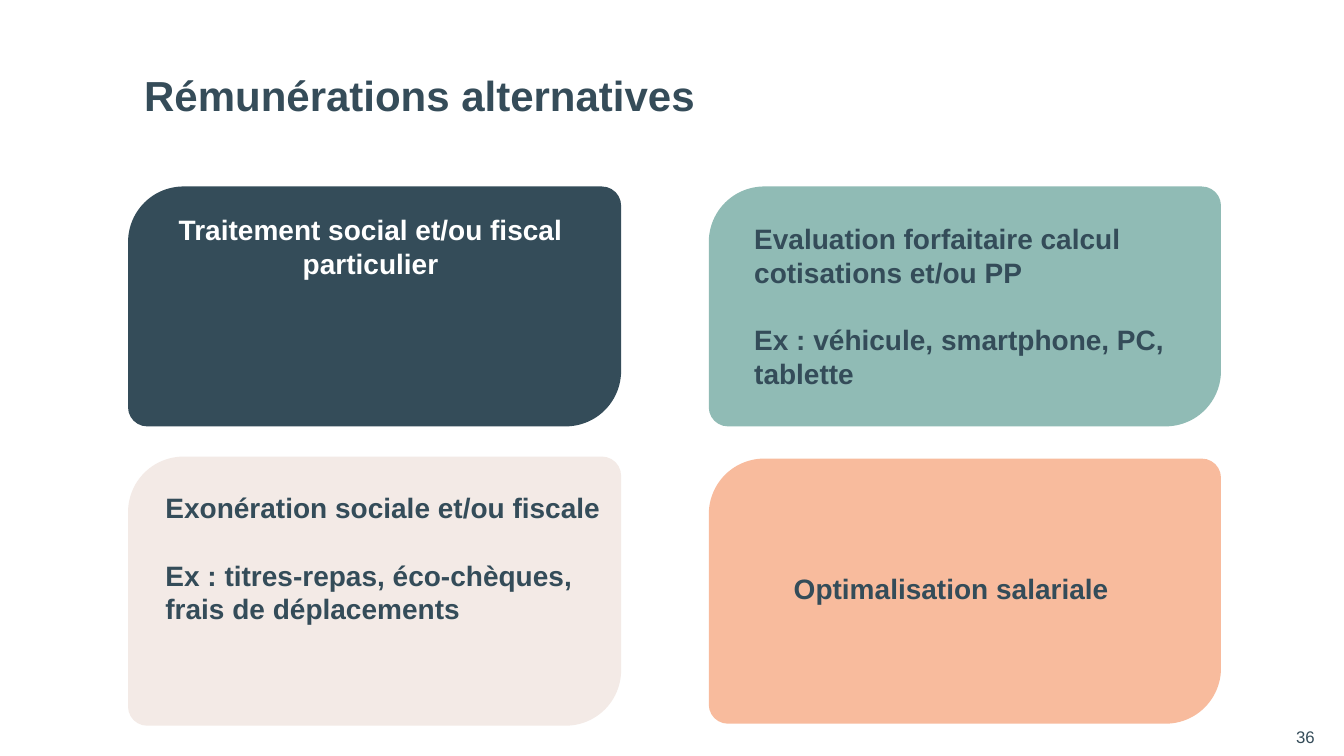
from pptx import Presentation
from pptx.dml.color import RGBColor
from pptx.enum.shapes import MSO_SHAPE
from pptx.enum.text import MSO_ANCHOR, PP_ALIGN
from pptx.util import Inches, Pt

CARD_SHAPE = MSO_SHAPE.ROUND_2_DIAG_RECTANGLE
TOP, MIDDLE = MSO_ANCHOR.TOP, MSO_ANCHOR.MIDDLE
LEFT, CENTER, RIGHT = PP_ALIGN.LEFT, PP_ALIGN.CENTER, PP_ALIGN.RIGHT

COLORS = {
    "navy": "344C59",
    "title": "354C59",
    "white": "FFFFFF",
    "green": "90BBB5",
    "peach": "F8BB9D",
    "sand": "F3EAE6",
}
FONT = "Arial"

# Card grid: (start, length) in inches
COLUMNS = [(1.27, 4.89), (7.03, 5.08)]
UPPER_ROW = (1.85, 2.38)
LOWER_LEFT_ROW, LOWER_RIGHT_ROW = (4.53, 2.67), (4.55, 2.63)
LARGE_RADIUS, SMALL_RADIUS = 0.55, 0.19
TEXT_SIZE = (4.51, 1.88)
CARD_LINE = Pt(24)

# Column, row, fill, text offset in the card, text colour, alignment, paragraphs
CARDS = [
    (0, UPPER_ROW, "navy", (0.15, 0.26), "white", CENTER,
     ["Traitement social et/ou fiscal particulier"]),
    (1, UPPER_ROW, "green", (0.45, 0.35), "navy", LEFT,
     ["Evaluation forfaitaire calcul cotisations et/ou PP",
      "Ex : véhicule, smartphone, PC, tablette"]),
    (0, LOWER_LEFT_ROW, "sand", (0.37, 0.34), "navy", LEFT,
     ["Exonération sociale et/ou fiscale",
      "Ex : titres-repas, éco-chèques, frais de déplacements"]),
    (1, LOWER_RIGHT_ROW, "peach", (0.15, 1.12), "navy", CENTER,
     ["Optimalisation salariale"]),
]


def add_text(page, area, lines, size, color, bold=True, align=LEFT,
             anchor=TOP, line_spacing=1.0):
    box = page.shapes.add_textbox(*map(Inches, area))
    frame = box.text_frame
    frame.text = "\n".join(lines)
    frame.word_wrap = True
    frame.vertical_anchor = anchor
    frame.margin_left = frame.margin_right = 0
    frame.margin_top = frame.margin_bottom = 0
    for index, para in enumerate(frame.paragraphs):
        para.alignment = align
        para.line_spacing = line_spacing
        if index:
            para.space_before = CARD_LINE
        for span in para.runs:
            span.font.name = FONT
            span.font.size = Pt(size)
            span.font.bold = bold
            span.font.color.rgb = RGBColor.from_string(COLORS[color])


def add_card(page, column, row, fill, offset, color, align, lines):
    (left, width), (top, height) = COLUMNS[column], row
    card = page.shapes.add_shape(
        CARD_SHAPE, *map(Inches, (left, top, width, height)))
    card.adjustments[0] = LARGE_RADIUS / height
    card.adjustments[1] = SMALL_RADIUS / height
    card.shadow.inherit = False
    card.fill.solid()
    card.fill.fore_color.rgb = RGBColor.from_string(COLORS[fill])
    card.line.fill.background()

    area = (left + offset[0], top + offset[1], *TEXT_SIZE)
    add_text(page, area, lines, 20, color, align=align, line_spacing=CARD_LINE)


def main():
    deck = Presentation()
    deck.slide_width, deck.slide_height = Inches(13.33), Inches(7.5)
    page = deck.slides.add_slide(deck.slide_layouts[6])

    # Title and page number
    add_text(page, (1.43, 0.4, 9.35, 1.15), ["Rémunérations alternatives"],
             30, "title", anchor=MIDDLE, line_spacing=0.9)
    add_text(page, (12.22, 7.21, 0.82, 0.2), ["36"], 12, "title",
             bold=False, align=RIGHT, anchor=MIDDLE)

    # Four cards
    for card in CARDS:
        add_card(page, *card)

    deck.save("out.pptx")


if __name__ == "__main__":
    main()
